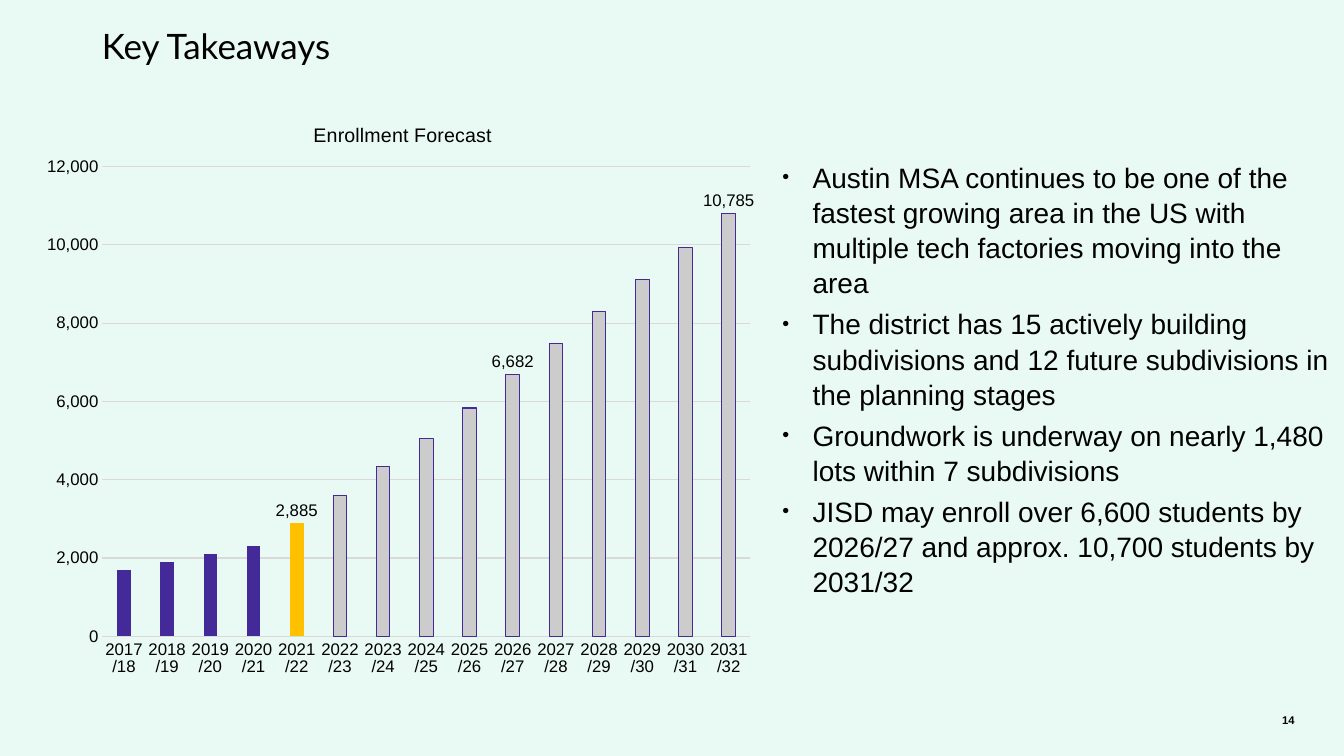
from lxml.etree import SubElement
from pptx import Presentation
from pptx.chart.data import CategoryChartData
from pptx.dml.color import RGBColor
from pptx.enum.chart import XL_CHART_TYPE, XL_LABEL_POSITION, XL_TICK_MARK
from pptx.enum.text import MSO_ANCHOR, PP_ALIGN
from pptx.oxml import parse_xml
from pptx.oxml.ns import nsdecls, qn
from pptx.util import Inches, Pt

COLORS = {
    "background": "E9FAF4",
    "text": "000000",
    "grid": "D9D9D9",
    "past": "442A99",
    "current": "FFC000",
    "forecast": "CCCCCC",
}
FIRST_YEAR = 2017
CURRENT = 4
LABELLED = (4, 9, 14)
ENROLLMENT = (1703, 1897, 2102, 2305, 2885, 3604, 4326, 5061,
              5830, 6682, 7485, 8301, 9107, 9919, 10785)
TAKEAWAYS = (
    "Austin MSA continues to be one of the fastest growing area in the US "
    "with multiple tech factories moving into the area",
    "The district has 15 actively building subdivisions and 12 future "
    "subdivisions in the planning stages",
    "Groundwork is underway on nearly 1,480 lots within 7 subdivisions",
    "JISD may enroll over 6,600 students by 2026/27 and approx. 10,700 "
    "students by 2031/32",
)


def color(name):
    return RGBColor.from_string(COLORS[name])


def style_font(font, size=12, face="Arial", bold=False):
    font.size = Pt(size)
    font.name = face
    font.bold = bold
    font.color.rgb = color("text")


def write(paragraph, text, align=PP_ALIGN.LEFT, **style):
    paragraph.alignment = align
    run = paragraph.add_run()
    run.text = text
    style_font(run.font, **style)


def add_bullet(paragraph):
    properties = paragraph._p.get_or_add_pPr()
    properties.set("marL", str(Inches(0.3)))
    properties.set("indent", str(-Inches(0.3)))
    SubElement(properties, qn("a:buSzPct"), val="70000")
    SubElement(properties, qn("a:buFont"), typeface="Arial")
    SubElement(properties, qn("a:buChar"), char="•")


def manual_layout(target="", **shares):
    inner = '<c:layoutTarget val="inner"/>' if target else ""
    modes = "".join(f'<c:{key}Mode val="edge"/>' for key in "xy")
    values = "".join(f'<c:{key} val="{share}"/>' for key, share in shares.items())
    return parse_xml(f'<c:layout {nsdecls("c")}><c:manualLayout>{inner}{modes}'
                     f'{values}</c:manualLayout></c:layout>')


class TakeawaysSlide:
    columns = rows = 100

    def __init__(self, deck):
        self.width, self.height = deck.slide_width, deck.slide_height
        self.slide = deck.slides.add_slide(deck.slide_layouts[6])
        fill = self.slide.background.fill
        fill.solid()
        fill.fore_color.rgb = color("background")

    def place(self, column, row, across, down):
        return (round(self.width * column / self.columns),
                round(self.height * row / self.rows),
                round(self.width * across / self.columns),
                round(self.height * down / self.rows))

    def text(self, area, texts, bullets=False, anchor=MSO_ANCHOR.TOP, **style):
        frame = self.slide.shapes.add_textbox(*self.place(*area)).text_frame
        frame.word_wrap = True
        frame.vertical_anchor = anchor
        frame.margin_left = frame.margin_right = 0
        frame.margin_top = frame.margin_bottom = 0
        for index, text in enumerate(texts):
            paragraph = frame.add_paragraph() if index else frame.paragraphs[0]
            if bullets:
                add_bullet(paragraph)
                paragraph.line_spacing = 1.05
                paragraph.space_after = Pt(4)
            write(paragraph, text, **style)

    def column_chart(self, area, heading, categories, values):
        data = CategoryChartData(number_format="#,##0")
        data.categories = categories
        data.add_series("Series 1", values)
        chart = self.slide.shapes.add_chart(
            XL_CHART_TYPE.COLUMN_CLUSTERED, *self.place(*area), data).chart
        style_font(chart.font)
        chart.has_legend = False
        title = chart.chart_title
        write(title.text_frame.paragraphs[0], heading, PP_ALIGN.CENTER, size=14)
        title.include_in_layout = False
        for old in title._element.findall(qn("c:layout")):
            title._element.remove(old)
        title._element.find(qn("c:tx")).addnext(manual_layout(x=0.38, y=0.04))
        plot_area = chart._chartSpace.chart.plotArea
        for old in plot_area.findall(qn("c:layout")):
            plot_area.remove(old)
        plot_area.insert(0, manual_layout("inner", x=0.097, y=0.121, w=0.884, h=0.793))
        self.format_axes(chart)
        plot = chart.plots[0]
        plot.gap_width, plot.overlap = 219, -27
        plot.vary_by_categories = False
        self.format_columns(plot.series[0], len(values))

    def format_axes(self, chart):
        years, students = chart.category_axis, chart.value_axis
        for axis in (years, students):
            axis.major_tick_mark = axis.minor_tick_mark = XL_TICK_MARK.NONE
            style_font(axis.tick_labels.font)
        students.minimum_scale, students.maximum_scale = 0, 12000
        students.major_unit = 2000
        students.tick_labels.number_format = "#,##0"
        students.tick_labels.number_format_is_linked = False
        students.format.line.fill.background()
        for line in (years.format.line, students.major_gridlines.format.line):
            line.color.rgb = color("grid")
            line.width = Pt(0.75)

    def format_columns(self, enrollment, count):
        enrollment.invert_if_negative = False
        enrollment.format.fill.solid()
        enrollment.format.fill.fore_color.rgb = color("past")
        for index in range(CURRENT, count):
            look = enrollment.points[index].format
            look.fill.solid()
            if index == CURRENT:
                look.fill.fore_color.rgb = color("current")
                continue
            look.fill.fore_color.rgb = color("forecast")
            look.line.color.rgb = color("past")
            look.line.width = Pt(0.75)
        for index in LABELLED:
            label = enrollment.points[index].data_label
            style_font(label.font)
            label.position = XL_LABEL_POSITION.OUTSIDE_END


def main():
    deck = Presentation()
    deck.slide_width, deck.slide_height = Inches(13.33), Inches(7.5)
    page = TakeawaysSlide(deck)
    page.text((7.58, 3.2, 48.76, 6.67), ["Key Takeaways"], size=25, face="Lato")
    school_years = [f"{year}/{(year + 1) % 100}"
                    for year in range(FIRST_YEAR, FIRST_YEAR + len(ENROLLMENT))]
    page.column_chart((2.33, 12.53, 54.54, 78.4), "Enrollment Forecast",
                      school_years, ENROLLMENT)
    page.text((58.21, 18.4, 40.74, 63.33), TAKEAWAYS, bullets=True,
              anchor=MSO_ANCHOR.MIDDLE, size=20)
    page.text((74.57, 92.53, 21.75, 5.33), ["14"], anchor=MSO_ANCHOR.MIDDLE,
              align=PP_ALIGN.RIGHT, size=8, bold=True)
    deck.save("out.pptx")


if __name__ == "__main__":
    main()
